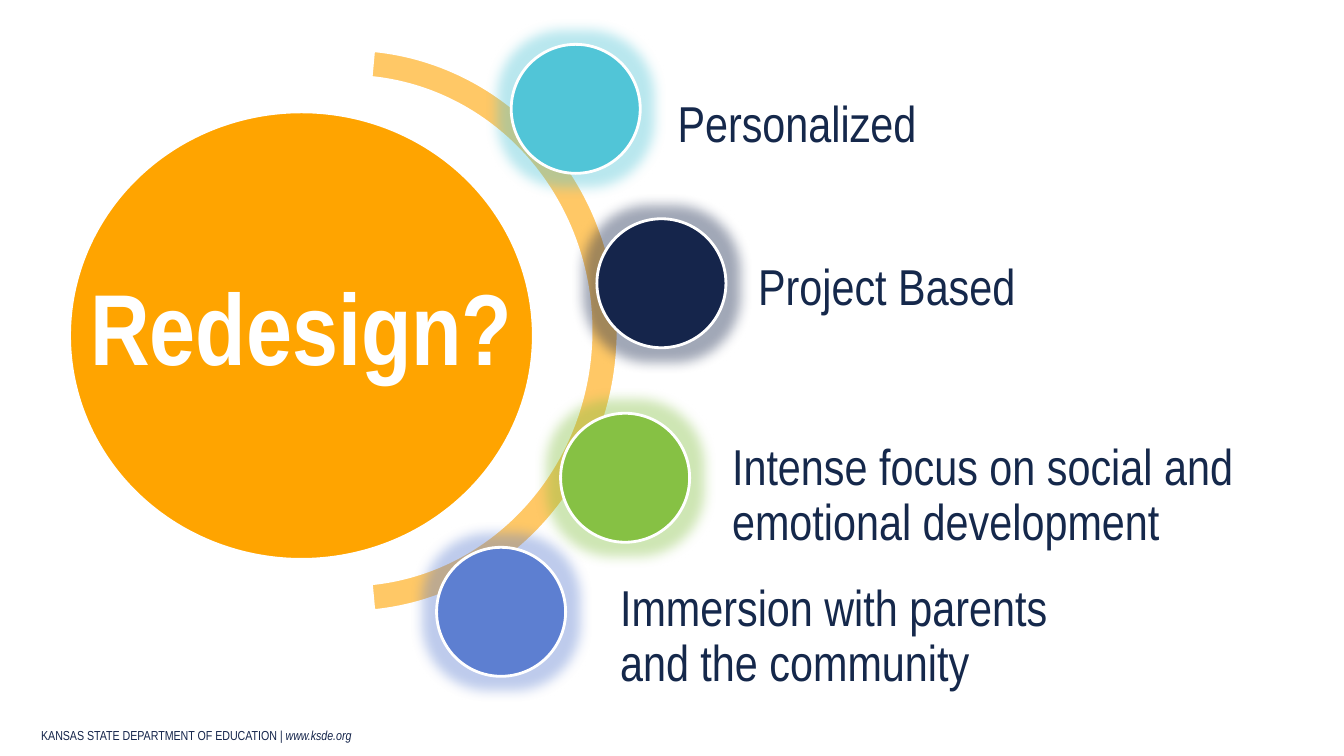
from lxml.etree import SubElement
from pptx import Presentation
from pptx.dml.color import RGBColor
from pptx.enum.shapes import MSO_SHAPE
from pptx.enum.text import MSO_ANCHOR, PP_ALIGN
from pptx.oxml.ns import qn
from pptx.util import Inches, Pt

WHITE = RGBColor(0xFF, 0xFF, 0xFF)
NAVY = RGBColor(0x15, 0x25, 0x4B)
TEXT_NAVY = RGBColor(0x15, 0x28, 0x4B)
ORANGE = RGBColor(0xFF, 0xA4, 0x00)
LIGHT_ORANGE = RGBColor(0xFF, 0xC8, 0x66)
GREEN = RGBColor(0x86, 0xC1, 0x44)
BLUE = RGBColor(0x5D, 0x7F, 0xD1)
CYAN = RGBColor(0x51, 0xC5, 0xD7)
DOT_SIZE = 1.28

deck = Presentation()
deck.slide_width = Inches(13.33)
deck.slide_height = Inches(7.5)
page = deck.slides.add_slide(deck.slide_layouts[6])


def add_outlined(kind, left, top, width, height, color):
    shape = page.shapes.add_shape(
        kind, Inches(left), Inches(top), Inches(width), Inches(height)
    )
    shape.fill.solid()
    shape.fill.fore_color.rgb = color
    shape.line.color.rgb = WHITE
    shape.line.width = Pt(2)
    shape.shadow.inherit = False
    return shape


def write(box, runs, size, color, anchor, margin, wrap=True):
    frame = box.text_frame
    settings = {"word_wrap": wrap, "vertical_anchor": anchor}
    for side in ("left", "top", "right", "bottom"):
        settings[f"margin_{side}"] = Inches(margin)
    for name, value in settings.items():
        setattr(frame, name, value)
    para = frame.paragraphs[0]
    for text, style in runs:
        span = para.add_run()
        span.text = text
        span.font.color.rgb = color
        for name, value in {"name": "Arial Narrow", "size": Pt(size), **style}.items():
            setattr(span.font, name, value)
    return para


footer = page.shapes.add_textbox(Inches(0.31), Inches(7.16), Inches(6.36), Inches(0.26))
write(
    footer,
    [
        ("KANSAS STATE DEPARTMENT OF EDUCATION ", {}),
        ("| www.ksde.org", {"italic": True}),
    ],
    9.3, NAVY, MSO_ANCHOR.BOTTOM, 0.1,
).alignment = PP_ALIGN.LEFT
footer.text_frame.margin_top = footer.text_frame.margin_bottom = Inches(0.05)

hub = add_outlined(MSO_SHAPE.OVAL, 0.69, 1.11, 4.6, 4.44, ORANGE)
title = write(
    hub, [("Redesign?", {"bold": True})], 72, WHITE, MSO_ANCHOR.MIDDLE, 0, wrap=False
)
title.alignment = PP_ALIGN.CENTER
title.line_spacing = Pt(72)

arc = add_outlined(MSO_SHAPE.BLOCK_ARC, 0.78, 0.49, 5.35, 5.58, LIGHT_ORANGE)
for index, value in enumerate((165.09, 50.88, 0.05)):
    arc.adjustments[index] = value

topics = [
    ("Project Based", NAVY, (5.92, 2.17), (7.48, 2.57, 4, 0.59), MSO_ANCHOR.MIDDLE, 0.04),
    ("Intense focus on social and emotional development", GREEN, (5.56, 4.1),
     (7.22, 4.31, 5.28, 1.24), MSO_ANCHOR.MIDDLE, 0.04),
    ("Immersion with parents and the community", BLUE, (4.33, 5.43),
     (6.11, 5.83, 4.56, 0.99), MSO_ANCHOR.MIDDLE, 0.04),
    ("Personalized", CYAN, (5.07, 0.44), (6.72, 0.98, 4.21, 0.45), MSO_ANCHOR.TOP, 0),
]
for text, color, dot_corner, label_area, anchor, margin in topics:
    dot = add_outlined(MSO_SHAPE.OVAL, *dot_corner, DOT_SIZE, DOT_SIZE, color)
    effects = dot.element.spPr.find(qn("a:effectLst"))
    glow = SubElement(effects, qn("a:glow"), rad=str(Pt(18)))
    glow_color = SubElement(glow, qn("a:srgbClr"), val=str(color))
    SubElement(glow_color, qn("a:alpha"), val="40000")

    label = page.shapes.add_textbox(*(Inches(length) for length in label_area))
    para = write(label, [(text, {})], 36, TEXT_NAVY, anchor, margin)
    para.line_spacing = 0.9

deck.save("out.pptx")
